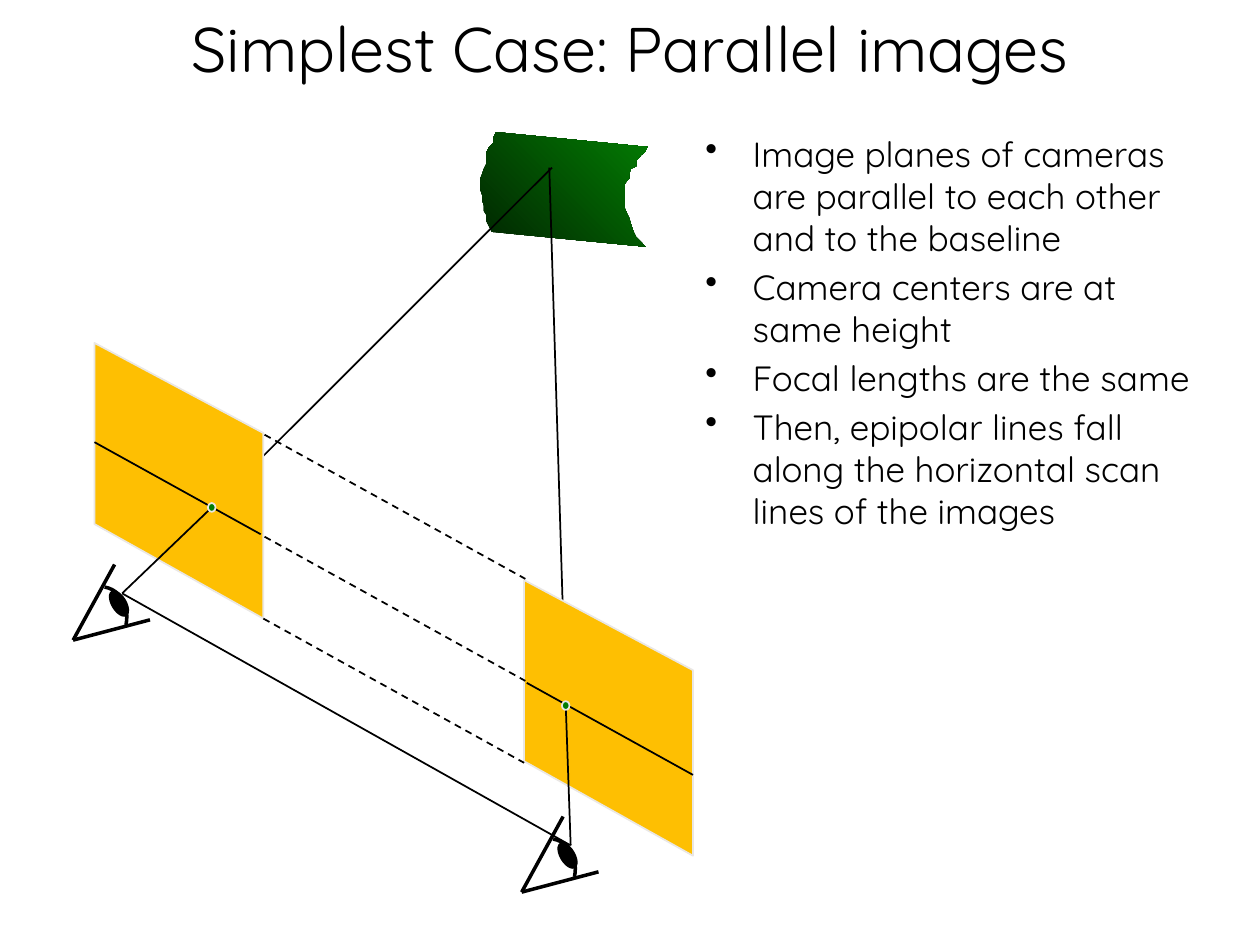
"""Build a slide on stereo geometry with parallel image planes."""
from lxml import etree
from pptx import Presentation
from pptx import util as u
from pptx.dml.color import RGBColor
from pptx.enum import dml, shapes, text
from pptx.oxml.ns import qn

FONT = "Quicksand"
COLORS = {"ink": "000000", "plane": "FEBF02", "edge": "EAE7E4",
          "dark_green": "012501", "green": "037C03"}
TITLE = "Simplest Case: Parallel images"
BULLETS = [
    "Image planes of cameras are parallel to each other and to the baseline",
    "Camera centers are at same height",
    "Focal lengths are the same",
    "Then, epipolar lines fall along the horizontal scan lines of the images",
]

SURFACE = [
    (283.5, 75.5), (282, 78.5), (282, 81.5), (279.5, 84), (278, 87), (278, 93.5),
    (276.5, 96.5), (275.5, 99.5), (274.5, 102), (274.5, 108.5), (275.5, 111.5),
    (275.5, 114.5), (276.5, 117.5), (276.5, 120.5), (278, 123), (278, 126.5),
    (279.5, 129.5), (281, 132.5), (369, 141), (363.5, 135.5), (362, 132.5),
    (360.5, 128), (359.5, 124.5), (358, 121.5), (357, 119), (357, 105),
    (359.5, 102), (359.5, 99.5), (360.5, 96.5), (363.5, 95), (363.5, 92),
    (366.5, 88.5), (368.5, 87), (370, 84),
]
PLANE = [(54, 299.5), (150.5, 353.5), (150.5, 247.5), (54, 196)]
PLANE_SHIFT = (245.5, 135.5)
SCAN_LINE = [(54, 252.7), (149, 305.3)]
SCAN_SHIFT = (247, 137.5)
DASHES = [(151.2, 248.4), (150.5, 353.5), (151.2, 306.7)]
DASH_SPAN = (149, 82.4)
CAMERA = (69.8, 339.1)
EYE_SHIFT = (256.3, 144)
EYELIDS = [(65.5, 322.6), (41.8, 365.8), (85.7, 354.2)]
CORNEA = [(59.8, 335.5), (69.1, 337), (74.2, 347), (72, 357.1)]
PUPIL = (68, 344.9)
SCENE_POINTS = [(315.4, 95.8), (313.9, 95.8)]
IMAGE_POINTS = [(121, 290), (323.3, 403.2)]


def color(name):
    return RGBColor.from_string(COLORS[name])


def shift(point, offset):
    return point[0] + offset[0], point[1] + offset[1]


def emu(point):
    return u.Pt(point[0]), u.Pt(point[1])


def style(shape, fill=None, line=None, width=1):
    shape.shadow.inherit = False
    if fill:
        shape.fill.solid()
        shape.fill.fore_color.rgb = color(fill)
    else:
        shape.fill.background()
    if line:
        shape.line.color.rgb = color(line)
        shape.line.width = u.Pt(width)
    else:
        shape.line.fill.background()


def add_line(slide, start, end, width=1, dashed=False):
    line = slide.shapes.add_connector(
        shapes.MSO_CONNECTOR.STRAIGHT, *emu(start), *emu(end))
    line.line.color.rgb = color("ink")
    line.line.width = u.Pt(width)
    if dashed:
        line.line.dash_style = dml.MSO_LINE.DASH
    etree.SubElement(line._element.spPr, qn("a:effectLst"))


def add_outline(slide, points, close=True):
    builder = slide.shapes.build_freeform(*emu(points[0]))
    builder.add_line_segments([emu(point) for point in points[1:]], close=close)
    return builder.convert_to_shape()


def add_ellipse(slide, center, width, height, fill, line, rotation=0):
    ellipse = slide.shapes.add_shape(
        shapes.MSO_SHAPE.OVAL, *emu((center[0] - width / 2, center[1] - height / 2)),
        u.Pt(width), u.Pt(height))
    ellipse.rotation = rotation
    style(ellipse, fill, line)


def bezier(controls, steps=12):
    def at(t):
        weights = ((1 - t) ** 3, 3 * t * (1 - t) ** 2, 3 * t * t * (1 - t), t ** 3)
        return tuple(sum(w * p[axis] for w, p in zip(weights, controls))
                     for axis in (0, 1))
    return [at(step / steps) for step in range(steps + 1)]


def add_eye(slide, offset):
    cornea = add_outline(
        slide, [shift(point, offset) for point in bezier(CORNEA)], close=False)
    style(cornea, line="ink", width=2)
    upper, corner, lower = [shift(point, offset) for point in EYELIDS]
    add_line(slide, upper, corner, 2)
    add_ellipse(slide, shift(PUPIL, offset), 7.9, 15.8, "ink", "ink", 329)
    add_line(slide, corner, lower, 2)


def add_title(slide):
    title = slide.shapes.title
    title.left, title.top, title.width, title.height = map(u.Pt, (0, 0, 720, 54))
    title.text_frame.text = TITLE
    title.text_frame.vertical_anchor = text.MSO_ANCHOR.MIDDLE
    paragraph = title.text_frame.paragraphs[0]
    paragraph.alignment = text.PP_ALIGN.CENTER
    format_font(paragraph, 36)


def format_font(paragraph, size):
    paragraph.font.name = FONT
    paragraph.font.size = u.Pt(size)
    paragraph.font.color.rgb = color("ink")


def add_bullets(slide):
    frame = slide.shapes.add_textbox(*map(u.Pt, (396, 72, 300, 414))).text_frame
    frame.word_wrap = True
    frame.text = "\n".join(BULLETS)
    for paragraph in frame.paragraphs:
        format_font(paragraph, 20)
        paragraph.space_before = u.Pt(4)
        properties = paragraph._p.get_or_add_pPr()
        properties.set("marL", str(u.Pt(27)))
        properties.set("indent", str(-u.Pt(27)))
        bullet = etree.Element(qn("a:buChar"), char="•")
        properties.find(qn("a:spcBef")).addnext(bullet)


def add_diagram(slide):
    surface = add_outline(slide, SURFACE)
    style(surface)
    surface.fill.gradient()
    surface.fill.gradient_angle = 45
    for stop, name in zip(surface.fill.gradient_stops, ("dark_green", "green")):
        stop.color.rgb = color(name)

    cameras = [CAMERA, shift(CAMERA, EYE_SHIFT)]
    add_line(slide, *cameras)
    for image, scene, offset in zip(IMAGE_POINTS, SCENE_POINTS, [(0, 0), PLANE_SHIFT]):
        add_line(slide, image, scene)
        plane = add_outline(slide, [shift(point, offset) for point in PLANE])
        style(plane, "plane", "edge")
    for camera, image in zip(cameras, IMAGE_POINTS):
        add_line(slide, camera, image)
    for offset in [(0, 0), EYE_SHIFT]:
        add_eye(slide, offset)
    for start in DASHES:
        add_line(slide, start, shift(start, DASH_SPAN), dashed=True)
    for offset in [(0, 0), SCAN_SHIFT]:
        add_line(slide, *[shift(point, offset) for point in SCAN_LINE])
    for image in IMAGE_POINTS:
        add_ellipse(slide, image, 4.3, 5, "green", "edge")


def main():
    presentation = Presentation()
    presentation.slide_width, presentation.slide_height = u.Pt(720), u.Pt(540)
    slide = presentation.slides.add_slide(presentation.slide_layouts[5])
    add_title(slide)
    add_bullets(slide)
    add_diagram(slide)
    presentation.save("out.pptx")


if __name__ == "__main__":
    main()
